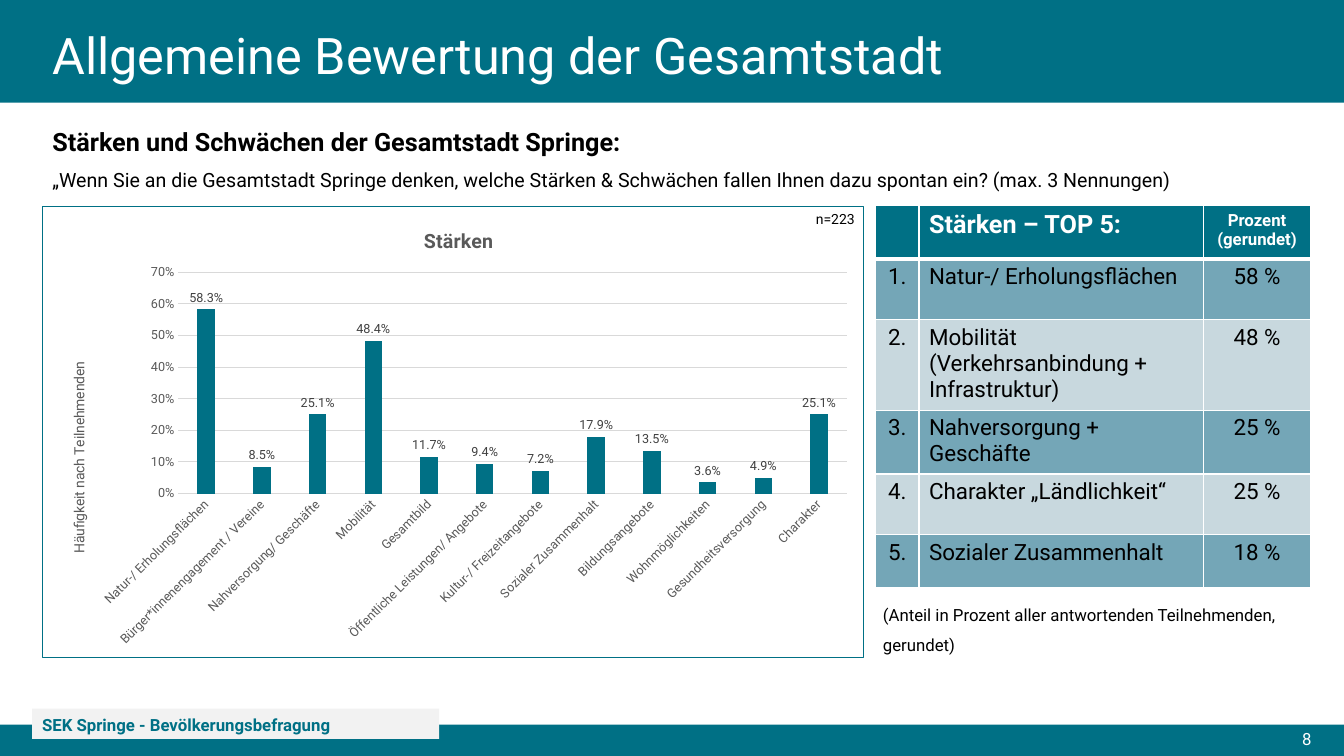
import lxml.etree
import pptx
import pptx.chart.data
import pptx.dml.color
import pptx.enum.chart
import pptx.enum.shapes
import pptx.enum.text
import pptx.oxml
import pptx.oxml.ns
import pptx.util

Cm = pptx.util.Cm
Pt = pptx.util.Pt
qn = pptx.oxml.ns.qn
Align = pptx.enum.text.PP_ALIGN
Anchor = pptx.enum.text.MSO_ANCHOR
Mark = pptx.enum.chart.XL_TICK_MARK

HUES = {
    "teal": "007085", "white": "FFFFFF", "black": "000000", "pale": "F2F2F2",
    "grid": "D9D9D9", "grey": "595959", "dark": "404040",
    "mid": "74A6B7", "light": "C8D8DE",
}

SHARES = {
    "Natur-/ Erholungsflächen": 0.583,
    "Bürger*innenengagement / Vereine": 0.085,
    "Nahversorgung/ Geschäfte": 0.251,
    "Mobilität": 0.484,
    "Gesamtbild": 0.117,
    "Öffentliche Leistungen/ Angebote": 0.094,
    "Kultur-/ Freizeitangebote": 0.072,
    "Sozialer Zusammenhalt": 0.179,
    "Bildungsangebote": 0.135,
    "Wohnmöglichkeiten": 0.036,
    "Gesundheitsversorgung": 0.049,
    "Charakter": 0.251,
}

RANKS = [
    ("Natur-/ Erholungsflächen", 58),
    ("Mobilität (Verkehrsanbindung + Infrastruktur)", 48),
    ("Nahversorgung + Geschäfte", 25),
    ("Charakter „Ländlichkeit“", 25),
    ("Sozialer Zusammenhalt", 18),
]


def tint(hue):
    return pptx.dml.color.RGBColor.from_string(HUES[hue])


def assign(item, **values):
    for name, value in values.items():
        setattr(item, name, value)


def paint(fill, hue):
    fill.solid()
    fill.fore_color.rgb = tint(hue)


def place(node, **spots):
    for old in node.findall(qn("c:layout")):
        node.remove(old)
    layout = lxml.etree.Element(qn("c:layout"))
    manual = lxml.etree.SubElement(layout, qn("c:manualLayout"))
    if "w" in spots:
        lxml.etree.SubElement(manual, qn("c:layoutTarget")).set("val", "inner")
    for mode in ("xMode", "yMode"):
        lxml.etree.SubElement(manual, qn("c:" + mode)).set("val", "edge")
    for name, value in spots.items():
        lxml.etree.SubElement(manual, qn("c:" + name)).set("val", str(value))
    node.insert(0 if node.find(qn("c:tx")) is None else 1, layout)


class Deck:
    face = "Roboto"

    def __init__(self):
        self.show = pptx.Presentation()
        assign(self.show, slide_width=Cm(33.87), slide_height=Cm(19.05))
        self.slide = self.show.slides.add_slide(self.show.slide_layouts[6])

    def font(self, font, size, hue, bold=False):
        assign(font, name=self.face, size=Pt(size), bold=bold)
        font.color.rgb = tint(hue)

    def put(self, para, text, size, hue, bold=False, **form):
        assign(para, **form)
        run = para.add_run()
        run.text = text
        self.font(run.font, size, hue, bold)

    def bar(self, box, hue):
        kind = pptx.enum.shapes.MSO_SHAPE.RECTANGLE
        shape = self.slide.shapes.add_shape(kind, *map(Cm, box))
        shape.shadow.inherit = False
        paint(shape.fill, hue)
        shape.line.fill.background()
        return shape

    def text(self, box, lines, anchor=Anchor.TOP, shape=None, **form):
        shape = shape or self.slide.shapes.add_textbox(*map(Cm, box))
        frame = shape.text_frame
        assign(frame, word_wrap=True, vertical_anchor=anchor)
        for spot, line in enumerate(lines):
            para = frame.add_paragraph() if spot else frame.paragraphs[0]
            self.put(para, *line, **form)

    def title(self, owner, text, size, bold, **spots):
        self.put(owner.text_frame.paragraphs[0], text, size, "grey", bold)
        place(owner._element, **spots)

    def chart(self, box, shares):
        data = pptx.chart.data.CategoryChartData(number_format="0.0%")
        data.categories = list(shares)
        data.add_series("Stärken", list(shares.values()))
        kind = pptx.enum.chart.XL_CHART_TYPE.COLUMN_CLUSTERED
        chart = self.slide.shapes.add_chart(kind, *map(Cm, box), data).chart
        assign(chart, has_legend=False, has_title=True)
        self.font(chart.font, 10, "black")
        self.title(chart.chart_title, "Stärken", 14, True, x=0.46, y=0.04)

        plot = chart.plots[0]
        assign(plot, gap_width=219, overlap=-27, vary_by_categories=False,
               has_data_labels=True)
        paint(plot.series[0].format.fill, "teal")
        assign(plot.data_labels, show_value=True, number_format="0.0%",
               number_format_is_linked=False,
               position=pptx.enum.chart.XL_LABEL_POSITION.OUTSIDE_END)
        self.font(plot.data_labels.font, 9, "dark")

        cats, vals = chart.category_axis, chart.value_axis
        for axis in (cats, vals):
            assign(axis, major_tick_mark=Mark.NONE, minor_tick_mark=Mark.NONE)
            self.font(axis.tick_labels.font, 9, "grey")
        cats._element.find(qn("c:txPr")).find(qn("a:bodyPr")).set("rot", "-2700000")
        assign(vals, minimum_scale=0, maximum_scale=0.7, major_unit=0.1,
               has_major_gridlines=True, has_title=True)
        assign(vals.tick_labels, number_format="0%", number_format_is_linked=False)
        vals.format.line.fill.background()
        for line in (cats.format.line, vals.major_gridlines.format.line):
            line.color.rgb = tint("grid")
            line.width = Pt(0.75)
        self.title(vals.axis_title, "Häufigkeit nach Teilnehmenden", 10, False,
                   x=0.03, y=0.34)
        vals.axis_title.text_frame._txBody.find(qn("a:bodyPr")).set("rot", "-5400000")

        space = chart._chartSpace
        place(space.find(qn("c:chart")).find(qn("c:plotArea")),
              x=0.165, y=0.147, w=0.815, h=0.49)
        space.find(qn("c:chart")).addnext(pptx.oxml.parse_xml(
            f'<c:spPr {pptx.oxml.ns.nsdecls("c", "a")}>'
            f'<a:solidFill><a:srgbClr val="{HUES["white"]}"/></a:solidFill>'
            f'<a:ln w="9525"><a:solidFill><a:srgbClr val="{HUES["teal"]}"/>'
            '</a:solidFill></a:ln></c:spPr>'))

    def cell(self, cell, hue, text, size, ink, bold, align, top, base):
        props = cell._tc.get_or_add_tcPr()
        for side, width in zip("LRTB", (1, 1, top, base)):
            props.append(pptx.oxml.parse_xml(
                f'<a:ln{side} {pptx.oxml.ns.nsdecls("a")} w="{Pt(width)}">'
                f'<a:solidFill><a:srgbClr val="{HUES["white"]}"/></a:solidFill>'
                f'</a:ln{side}>'))
        paint(cell.fill, hue)
        if text:
            para = cell.text_frame.paragraphs[0]
            self.put(para, text, size, ink, bold, alignment=align)

    def table(self, box, cols, rows, ranks):
        shape = self.slide.shapes.add_table(len(rows), len(cols), *map(Cm, box))
        table = shape.table
        for col, width in zip(table.columns, cols):
            col.width = Cm(width)
        for row, height in zip(table.rows, rows):
            row.height = Cm(height)
        lines = [("", "Stärken – TOP 5:", "Prozent (gerundet)")]
        lines += [(f"{n}.", name, f"{share} %")
                  for n, (name, share) in enumerate(ranks, 1)]
        for r, line in enumerate(lines):
            head = r == 0
            hue = "teal" if head else ("mid" if r % 2 else "light")
            for c, text in enumerate(line):
                size = (18, 18, 12)[c] if head else 16
                self.cell(table.cell(r, c), hue, text, size,
                          "white" if head else "black", head,
                          Align.LEFT if c == 1 else Align.CENTER,
                          3 if r == 1 else 1, 3 if head else 1)


def main():
    deck = Deck()
    deck.bar((0, 0, 33.87, 2.59), "teal")
    deck.bar((0, 18.26, 33.87, 0.79), "teal")
    deck.text((22.15, 18.24, 11.15, 0.76), [("8", 12, "white")],
              Anchor.MIDDLE, alignment=Align.RIGHT)
    tag = deck.bar((0.81, 17.86, 10.26, 0.76), "pale")
    deck.text(None, [("SEK Springe - Bevölkerungsbefragung", 12, "teal", True)],
              Anchor.MIDDLE, tag, alignment=Align.LEFT, line_spacing=1.07)
    deck.chart((1.07, 5.18, 20.7, 11.4), SHARES)
    deck.text((1.07, 0.53, 29.21, 1.85),
              [("Allgemeine Bewertung der Gesamtstadt", 36, "white")],
              Anchor.MIDDLE, line_spacing=0.9)
    deck.text((1.07, 2.67, 31.6, 2.18), [
        ("Stärken und Schwächen der Gesamtstadt Springe:", 18, "black", True),
        ("„Wenn Sie an die Gesamtstadt Springe denken, welche Stärken & Schwächen "
         "fallen Ihnen dazu spontan ein? (max. 3 Nennungen)", 14, "black"),
    ], line_spacing=1.5)
    deck.text((22, 14.86, 11.05, 1.7),
              [("(Anteil in Prozent aller antwortenden Teilnehmenden, gerundet)",
                12, "black")], line_spacing=1.5)
    deck.text((20.14, 5.18, 1.65, 0.69), [("n=223", 10, "black")],
              alignment=Align.RIGHT)
    deck.table((22.07, 5.18, 10.97, 9.45), (1.09, 7.16, 2.72),
               (1.35, 1.52, 2.18, 1.52, 1.52, 1.35), RANKS)
    deck.show.save("out.pptx")


if __name__ == "__main__":
    main()
